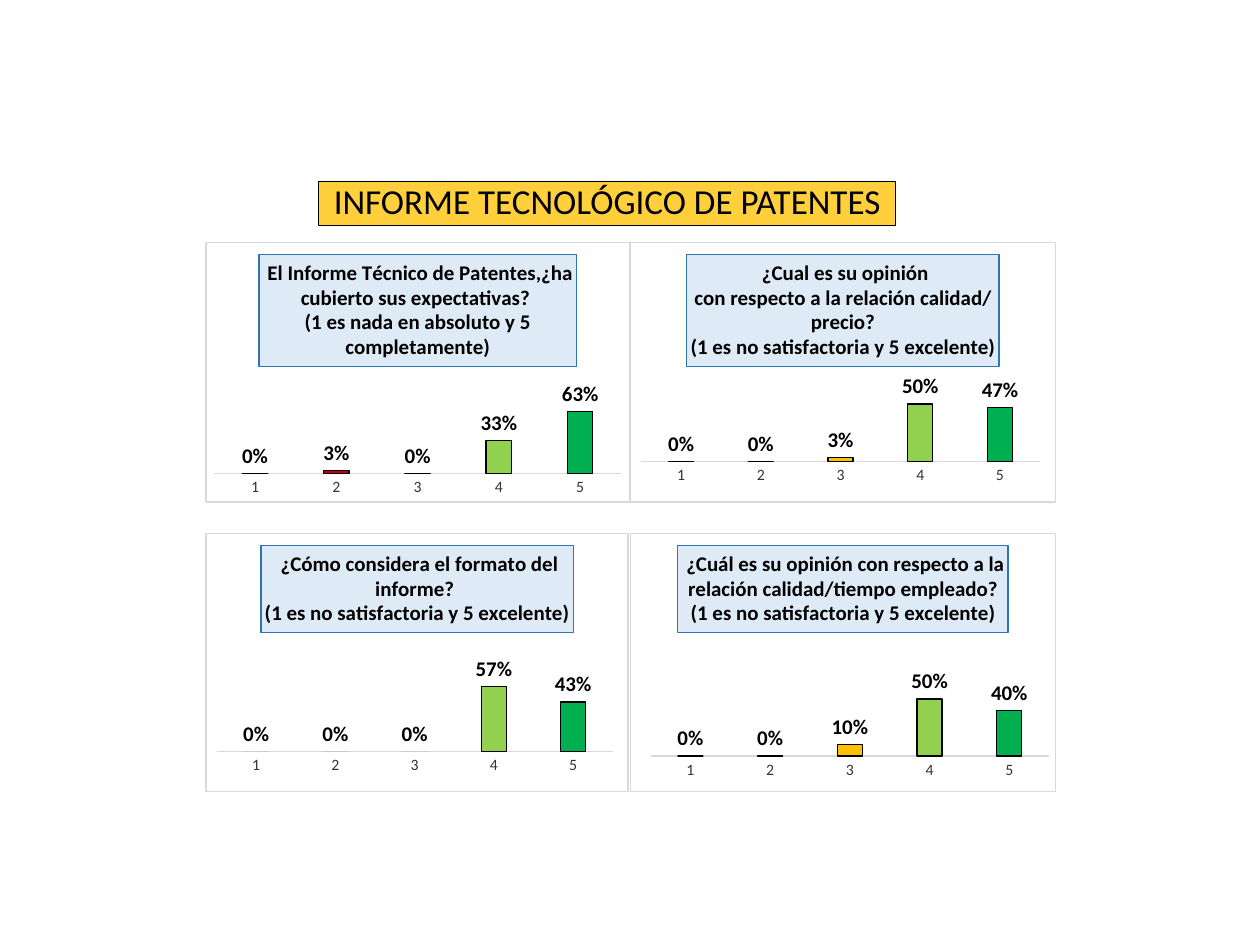
from lxml import etree
from pptx import Presentation
from pptx.chart.data import CategoryChartData
from pptx.dml.color import RGBColor
from pptx.enum.chart import XL_CHART_TYPE, XL_LABEL_POSITION, XL_TICK_MARK
from pptx.enum.shapes import MSO_SHAPE
from pptx.enum.text import MSO_ANCHOR, PP_ALIGN
from pptx.oxml import parse_xml
from pptx.oxml.ns import nsdecls, qn
from pptx.util import Inches, Pt

COLUMNS = XL_CHART_TYPE.COLUMN_CLUSTERED
OUTSIDE_END = XL_LABEL_POSITION.OUTSIDE_END
NO_TICK = XL_TICK_MARK.NONE
RECTANGLE = MSO_SHAPE.RECTANGLE
MIDDLE = MSO_ANCHOR.MIDDLE
CENTER = PP_ALIGN.CENTER

FONT = "Calibri"
BLACK, GRAY, DARK_GRAY = "000000", "D9D9D9", "333333"
RED, BROWN, AMBER = "C00000", "806000", "FFC000"
LIME, GREEN = "92D050", "00B050"
SCORES = ["1", "2", "3", "4", "5"]

# Box, question, plot area (fractions), values, series colour, point colours, outline
SURVEY = [
    ((1.63, 1.92, 3.37, 2.07),
     " El Informe Técnico de Patentes,¿ha cubierto sus expectativas? \n"
     "(1 es nada en absoluto y 5 completamente)",
     (0.02, 0.51, 0.96, 0.38), (0, 0.03, 0, 0.33, 0.63),
     RED, {3: LIME, 4: GREEN}, True),
    ((5, 1.92, 3.38, 2.07),
     " ¿Cual es su opinión\ncon respecto a la relación calidad/ precio?\n"
     "(1 es no satisfactoria y 5 excelente)",
     (0.025, 0.401, 0.939, 0.442), (0, 0, 0.03, 0.5, 0.47),
     AMBER, {3: LIME, 4: GREEN}, True),
    ((1.63, 4.23, 3.36, 2.06),
     " ¿Cómo considera el formato del informe? \n"
     "(1 es no satisfactoria y 5 excelente)",
     (0.025, 0.401, 0.939, 0.442), (0, 0, 0, 0.57, 0.43),
     GREEN, {1: BROWN, 3: LIME}, False),
    ((5, 4.23, 3.38, 2.06),
     " ¿Cuál es su opinión con respecto a la relación calidad/tiempo empleado?\n"
     "(1 es no satisfactoria y 5 excelente)",
     (0.047, 0.42, 0.939, 0.442), (0, 0, 0.1, 0.5, 0.4),
     GREEN, {0: RED, 1: BROWN, 2: AMBER, 3: LIME}, True),
]


def rgb(value):
    return RGBColor.from_string(value)


def set_font(font, size, color=BLACK, bold=False):
    font.name, font.size, font.bold = FONT, Pt(size), bold
    font.color.rgb = rgb(color)


def paint(target, fill, line=None):
    target.fill.solid()
    target.fill.fore_color.rgb = rgb(fill)
    if line:
        target.line.color.rgb = rgb(line)
        target.line.width = Pt(0.75)
    else:
        target.line.fill.background()


def frame_chart(chart):
    """White chart area with a thin gray border."""
    area = parse_xml(
        f'<c:spPr {nsdecls("c", "a")}>'
        '<a:solidFill><a:srgbClr val="FFFFFF"/></a:solidFill>'
        f'<a:ln w="{Pt(0.75)}"><a:solidFill><a:srgbClr val="{GRAY}"/>'
        '</a:solidFill></a:ln></c:spPr>')
    chart._chartSpace.find(qn("c:chart")).addnext(area)


def place_plot(chart, plot_box):
    """Fix the inner plot area, in fractions of the chart."""
    plot_area = chart._chartSpace.find(qn("c:chart")).find(qn("c:plotArea"))
    old = plot_area.find(qn("c:layout"))
    if old is not None:
        plot_area.remove(old)
    layout = etree.Element(qn("c:layout"))
    manual = etree.SubElement(layout, qn("c:manualLayout"))
    settings = [("layoutTarget", "inner"), ("xMode", "edge"), ("yMode", "edge")]
    settings += zip("xywh", plot_box)
    for tag, value in settings:
        etree.SubElement(manual, qn(f"c:{tag}")).set("val", str(value))
    plot_area.insert(0, layout)


def add_heading(page, box, text):
    shape = page.shapes.add_shape(RECTANGLE, *map(Inches, box))
    shape.shadow.inherit = False
    paint(shape, "FFD03B", BLACK)
    frame = shape.text_frame
    frame.word_wrap = False
    frame.vertical_anchor = MIDDLE
    para = frame.paragraphs[0]
    para.text = text
    para.alignment = CENTER
    para.line_spacing = 0.9
    set_font(para.font, 20)


def add_question(page, box, question, plot_box, values, color, point_colors, outlined):
    data = CategoryChartData(number_format="0%")
    data.categories = SCORES
    data.add_series("Series 1", values)
    chart = page.shapes.add_chart(COLUMNS, *map(Inches, box), data).chart
    set_font(chart.font, 10)
    chart.has_legend = False
    frame_chart(chart)
    place_plot(chart, plot_box)

    # Question in a blue box
    title = chart.chart_title
    title.text_frame.text = question
    for para in title.text_frame.paragraphs:
        set_font(para.font, 12, bold=True)
    paint(title.format, "DEEAF6", "2E75B6")

    # Axes
    scale = chart.value_axis
    scale.minimum_scale, scale.maximum_scale, scale.major_unit = 0, 1, 0.25
    scale.has_major_gridlines = False
    scale.visible = False
    axis = chart.category_axis
    axis.major_tick_mark = axis.minor_tick_mark = NO_TICK
    axis.format.line.color.rgb = rgb(GRAY)
    axis.format.line.width = Pt(0.75)
    set_font(axis.tick_labels.font, 9, DARK_GRAY)

    # Bars and percentages
    plot = chart.plots[0]
    plot.gap_width, plot.overlap = 219, -27
    plot.vary_by_categories = False
    series = plot.series[0]
    series.invert_if_negative = False
    outline = BLACK if outlined else None
    paint(series.format, color, outline)
    for index, point_color in point_colors.items():
        # The tall bars of every chart keep a black outline
        edge = BLACK if values[index] else outline
        paint(series.points[index].format, point_color, edge)
    if not outlined:
        paint(series.points[4].format, GREEN, BLACK)
    labels = series.data_labels
    labels.show_value = True
    labels.position = OUTSIDE_END
    labels.number_format = "0%"
    labels.number_format_is_linked = False
    set_font(labels.font, 12, bold=True)


def main():
    deck = Presentation()
    deck.slide_width, deck.slide_height = Inches(10), Inches(7.5)
    page = deck.slides.add_slide(deck.slide_layouts[6])
    add_heading(page, (2.53, 1.44, 4.58, 0.35), "INFORME TECNOLÓGICO DE PATENTES")
    for question in SURVEY:
        add_question(page, *question)
    deck.save("out.pptx")


if __name__ == "__main__":
    main()
